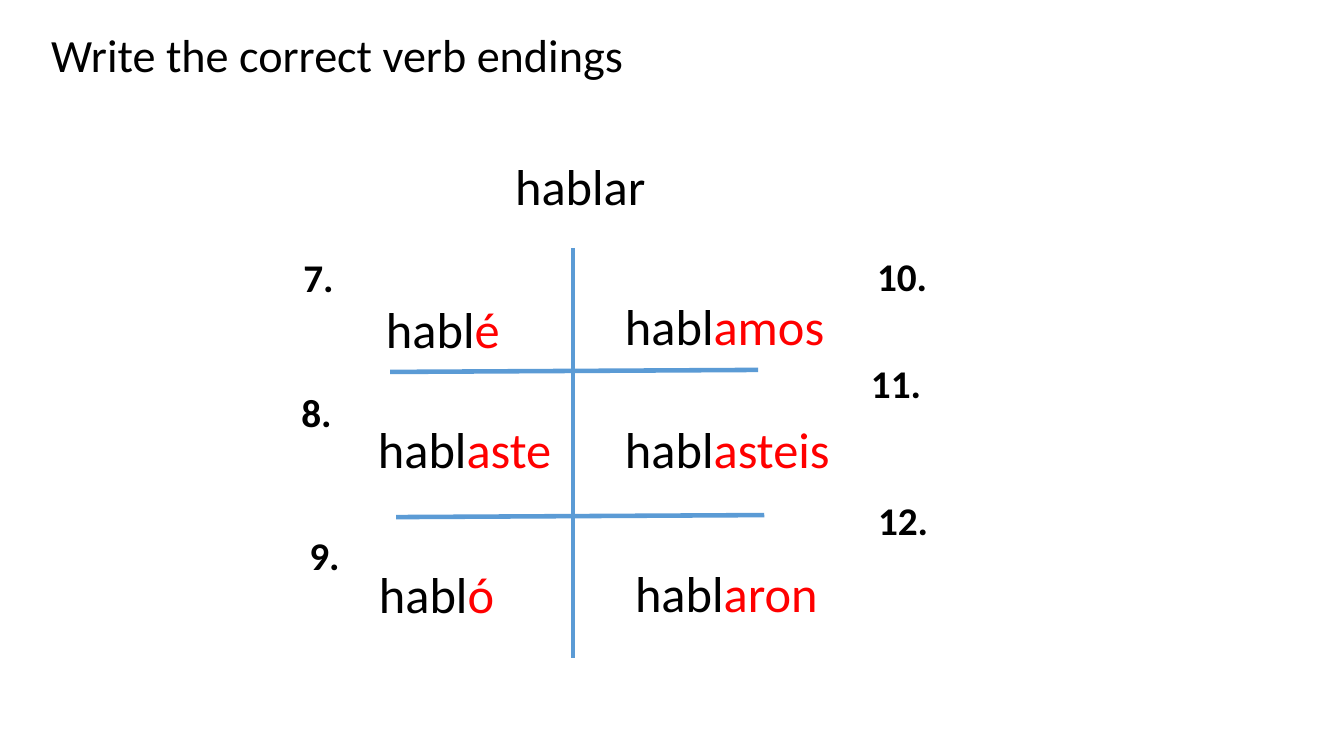
from dataclasses import dataclass

from lxml import etree
from pptx import Presentation, util as u
from pptx.dml.color import RGBColor
from pptx.enum import shapes, text
from pptx.oxml import ns
from pptx.slide import Slide


@dataclass(frozen=True)
class Theme:
    font: str = "Calibri"
    ink: str = "000000"
    ending: str = "FF0000"
    rule: str = "5B9BD5"
    title_size: float = 33
    verb_size: float = 36
    number_size: float = 28


@dataclass(frozen=True)
class Rule:
    x1: float
    y1: float
    x2: float
    y2: float
    weight: float


@dataclass(frozen=True)
class Verb:
    ending: str
    left: float
    top: float
    width: float


@dataclass(frozen=True)
class Number:
    label: str
    left: float
    top: float


THEME = Theme()
STEM = "habl"
VERB_HEIGHT = 0.71
NUMBER_WIDTH, NUMBER_HEIGHT = 0.71, 0.57

RULES = [
    Rule(5.68, 2.46, 5.68, 6.53, 3),
    Rule(3.87, 3.69, 7.52, 3.67, 3.25),
    Rule(3.93, 5.13, 7.58, 5.11, 3.25),
]
VERBS = [
    Verb("é", 3.73, 2.91, 1.34),
    Verb("aste", 3.65, 4.1, 1.94),
    Verb("ó", 3.66, 5.54, 1.36),
    Verb("amos", 6.1, 2.88, 2.2),
    Verb("asteis", 6.1, 4.1, 2.25),
    Verb("aron", 6.2, 5.53, 2.03),
]
NUMBERS = [
    Number("7.", 2.91, 2.46),
    Number("8.", 2.89, 3.8),
    Number("9.", 2.97, 5.22),
    Number("10.", 8.6, 2.45),
    Number("11.", 8.54, 3.52),
    Number("12.", 8.61, 4.87),
]


def add_rule(s: Slide, rule: Rule) -> None:
    ends = [u.Inches(v) for v in (rule.x1, rule.y1, rule.x2, rule.y2)]
    sp = s.shapes.add_connector(shapes.MSO_CONNECTOR.STRAIGHT, *ends)
    sp.line.color.rgb = RGBColor.from_string(THEME.rule)
    sp.line.width = u.Pt(rule.weight)
    etree.SubElement(sp._element.spPr, ns.qn("a:effectLst"))


def add_text(s: Slide, box: tuple[float, float, float, float],
             runs: list[tuple[str, str]], size: float,
             bold: bool = False, wrap: bool = True) -> None:
    """Add a one-line text box; each run is a (wording, colour) pair."""
    sp = s.shapes.add_textbox(*(u.Inches(v) for v in box))
    tf = sp.text_frame
    tf.word_wrap = wrap
    tf.auto_size = text.MSO_AUTO_SIZE.SHAPE_TO_FIT_TEXT
    p = tf.paragraphs[0]
    for wording, colour in runs:
        r = p.add_run()
        r.text = wording
        r.font.name = THEME.font
        r.font.size = u.Pt(size)
        r.font.bold = bold
        r.font.color.rgb = RGBColor.from_string(colour)


def main() -> None:
    prs = Presentation()
    prs.slide_width, prs.slide_height = u.Inches(13.33), u.Inches(7.5)
    s = prs.slides.add_slide(prs.slide_layouts[6])

    for rule in RULES:
        add_rule(s, rule)
    add_text(s, (0.41, 0.21, 7.46, 0.66),
             [("Write the correct verb endings", THEME.ink)], THEME.title_size)
    add_text(s, (5.01, 1.49, 1.51, VERB_HEIGHT),
             [("hablar", THEME.ink)], THEME.verb_size, wrap=False)
    for verb in VERBS:
        add_text(s, (verb.left, verb.top, verb.width, VERB_HEIGHT),
                 [(STEM, THEME.ink), (verb.ending, THEME.ending)],
                 THEME.verb_size, wrap=False)
    for number in NUMBERS:
        add_text(s, (number.left, number.top, NUMBER_WIDTH, NUMBER_HEIGHT),
                 [(number.label, THEME.ink)], THEME.number_size, bold=True)

    prs.save("out.pptx")


if __name__ == "__main__":
    main()
